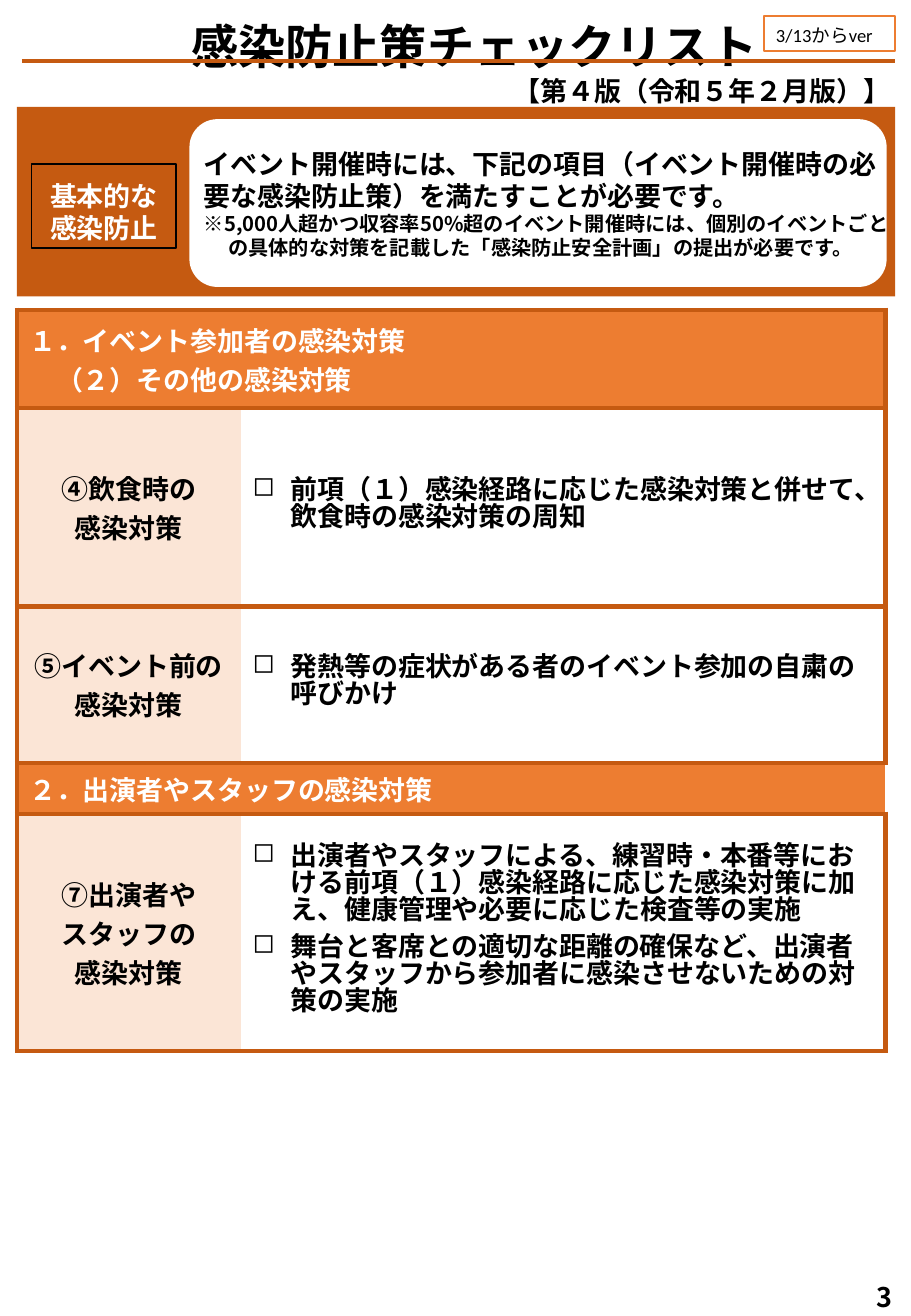
import pptx
import pptx.util
import pptx.dml.color
import pptx.enum.lang
import pptx.enum.shapes
import pptx.enum.text
import pptx.oxml.ns
import lxml.etree

Pt = pptx.util.Pt
RGB = pptx.dml.color.RGBColor
Shape = pptx.enum.shapes.MSO_SHAPE
Align = pptx.enum.text.PP_ALIGN
Anchor = pptx.enum.text.MSO_ANCHOR

RUST = RGB(0xC5, 0x5A, 0x11)
ORANGE = RGB(0xED, 0x7D, 0x31)
PEACH = RGB(0xFB, 0xE5, 0xD6)
WHITE = RGB(0xFF, 0xFF, 0xFF)
BLACK = RGB(0, 0, 0)

NOTO = "Noto Sans CJK JP"
LATIN = "Calibri"
LEFT = 10.1
SIDES = {"l": "a:lnL", "r": "a:lnR", "t": "a:lnT", "b": "a:lnB"}

ROWS = [
    (58.3, ["１．イベント参加者の感染対策", "　（２）その他の感染対策"], None),
    (117.4, ["④飲食時の", "感染対策"],
     ["前項（１）感染経路に応じた感染対策と併せて、飲食時の感染対策の周知"]),
    (92.9, ["⑤イベント前の感染対策"],
     ["発熱等の症状がある者のイベント参加の自粛の呼びかけ"]),
    (30.2, ["２．出演者やスタッフの感染対策"], None),
    (140.4, ["⑦出演者や", "スタッフの", "感染対策"],
     ["出演者やスタッフによる、練習時・本番等における前項（１）感染経路に応じた感染対策に加え、"
      "健康管理や必要に応じた検査等の実施",
      "舞台と客席との適切な距離の確保など、出演者やスタッフから参加者に感染させないための対策の実施"]),
]


def add_tag(parent, tag, **attrs):
    node = lxml.etree.SubElement(parent, pptx.oxml.ns.qn(tag))
    for key, value in attrs.items():
        node.set(key, value)
    return node


def add_line(frame, text, size=16, font=NOTO, tint=BLACK, bold=True,
             align=Align.LEFT, pitch=None):
    para = frame.paragraphs[0]
    if para.runs:
        para = frame.add_paragraph()
    para.alignment = align
    if pitch:
        para.line_spacing = Pt(pitch)
    run = para.add_run()
    run.text = text
    run.font.size = Pt(size)
    run.font.bold = bold
    run.font.name = font
    run.font.color.rgb = tint
    run.font.language_id = pptx.enum.lang.MSO_LANGUAGE_ID.JAPANESE
    add_tag(run._r.get_or_add_rPr(), "a:ea", typeface=NOTO)
    return para


def hang(para, indent):
    props = para._p.get_or_add_pPr()
    props.set("marL", str(Pt(indent)))
    props.set("indent", str(-Pt(indent)))
    return props


def set_frame(frame, top=3.6, anchor=Anchor.TOP, wrap=True):
    frame.auto_size = pptx.enum.text.MSO_AUTO_SIZE.NONE
    frame.word_wrap = wrap
    frame.vertical_anchor = anchor
    frame.margin_left = frame.margin_right = Pt(7.2)
    frame.margin_top = Pt(top)
    frame.margin_bottom = Pt(3.6)
    return frame


def add_box(slide, kind, place, fill=None, line=None):
    box = slide.shapes.add_shape(kind, *map(Pt, place))
    box.shadow.inherit = False
    if fill is None:
        box.fill.background()
    else:
        box.fill.solid()
        box.fill.fore_color.rgb = fill
    if line is None:
        box.line.fill.background()
    else:
        box.line.color.rgb = line
        box.line.width = Pt(1)
    return box


def add_text(slide, place, **frame):
    box = slide.shapes.add_textbox(*map(Pt, place))
    return set_frame(box.text_frame, **frame)


def set_cell(cell, fill, sides):
    props = cell._tc.get_or_add_tcPr()
    for side, tag in SIDES.items():
        edge = add_tag(props, tag, w=str(Pt(3)))
        if side in sides:
            paint = add_tag(edge, "a:solidFill")
            add_tag(paint, "a:srgbClr", val=str(RUST))
        else:
            add_tag(edge, "a:noFill")
    cell.fill.solid()
    cell.fill.fore_color.rgb = fill
    cell.vertical_anchor = Anchor.MIDDLE
    cell.margin_top = cell.margin_bottom = Pt(3)


def add_checks(frame, checks):
    for check in checks:
        para = add_line(frame, check, pitch=16)
        para.space_after = Pt(6)
        add_tag(hang(para, 22.5), "a:buChar", char="◻")


def add_grid(slide):
    widths = (132.5, 382.3)
    high = sum(row[0] for row in ROWS)
    place = (LEFT, 183.6, sum(widths), high)
    grid = slide.shapes.add_table(len(ROWS), 2, *map(Pt, place)).table
    grid.first_row = grid.horz_banding = False
    for col, width in zip(grid.columns, widths):
        col.width = Pt(width)
    for index, (height, label, checks) in enumerate(ROWS):
        grid.rows[index].height = Pt(height)
        head, body = grid.cell(index, 0), grid.cell(index, 1)
        if checks is None:
            ends = "tbr" if index == 0 else "tb"
            set_cell(head, ORANGE, "l" + ends)
            set_cell(body, ORANGE, ends)
            head.merge(body)
            tint, align = WHITE, Align.LEFT
        else:
            set_cell(head, PEACH, "ltb")
            set_cell(body, WHITE, "trb")
            add_checks(body.text_frame, checks)
            tint, align = BLACK, Align.CENTER
        for text in label:
            add_line(head.text_frame, text, font=LATIN, tint=tint, align=align)


def add_title(slide):
    title = slide.shapes.title
    title.left, title.top = Pt(-16.6), Pt(4.3)
    title.width, title.height = Pt(595.4), Pt(41)
    frame = set_frame(title.text_frame, top=6.7)
    add_line(frame, "感染防止策チェックリスト", 28, align=Align.CENTER, pitch=33)
    rule = slide.shapes.add_connector(
        pptx.enum.shapes.MSO_CONNECTOR.STRAIGHT,
        Pt(13), Pt(36), Pt(530.6), Pt(36))
    rule.line.color.rgb = RUST
    rule.line.width = Pt(2.25)
    add_tag(rule._element.spPr, "a:effectLst")


def add_banner(slide):
    add_box(slide, Shape.RECTANGLE, (LEFT, 63.4, 520.6, 112.3), RUST)
    add_box(slide, Shape.ROUNDED_RECTANGLE, (112.3, 70.6, 413.3, 99.4), WHITE)
    badge = add_box(slide, Shape.RECTANGLE, (18.7, 97.2, 85.7, 49.7), line=BLACK)
    frame = set_frame(badge.text_frame, top=10, anchor=Anchor.MIDDLE)
    for text in ("基本的な", "感染防止"):
        add_line(frame, text, tint=WHITE, align=Align.CENTER, pitch=19)
    frame = add_text(slide, (113.8, 82.8, 420.5, 77), top=5.4)
    add_line(frame, "イベント開催時には、下記の項目（イベント開催時の必要な感染防止策）を"
             "満たすことが必要です。", pitch=18.6)
    note = add_line(frame, "※5,000人超かつ収容率50%超のイベント開催時には、個別のイベントごとの"
                    "具体的な対策を記載した「感染防止安全計画」の提出が必要です。", 12, pitch=14.2)
    hang(note, 14.4)


def main():
    deck = pptx.Presentation()
    deck.slide_width, deck.slide_height = Pt(540), Pt(779.8)
    slide = deck.slides.add_slide(deck.slide_layouts[5])
    add_grid(slide)
    add_banner(slide)
    add_title(slide)
    frame = add_text(slide, (503.3, 753.1, 42.5, 26.6), top=7.2, anchor=Anchor.MIDDLE)
    add_line(frame, "3", align=Align.CENTER, pitch=19)
    frame = add_text(slide, (297.4, 38.9, 252, 26.6), top=5.4)
    add_line(frame, "【第４版（令和５年２月版）】", pitch=19)
    tag = add_box(slide, Shape.RECTANGLE, (452.9, 9.4, 77.8, 20.9), WHITE, ORANGE)
    frame = set_frame(tag.text_frame, top=5.4, anchor=Anchor.MIDDLE, wrap=False)
    add_line(frame, "3/13からver", 11, LATIN, bold=False, pitch=13)
    deck.save("out.pptx")


if __name__ == "__main__":
    main()
